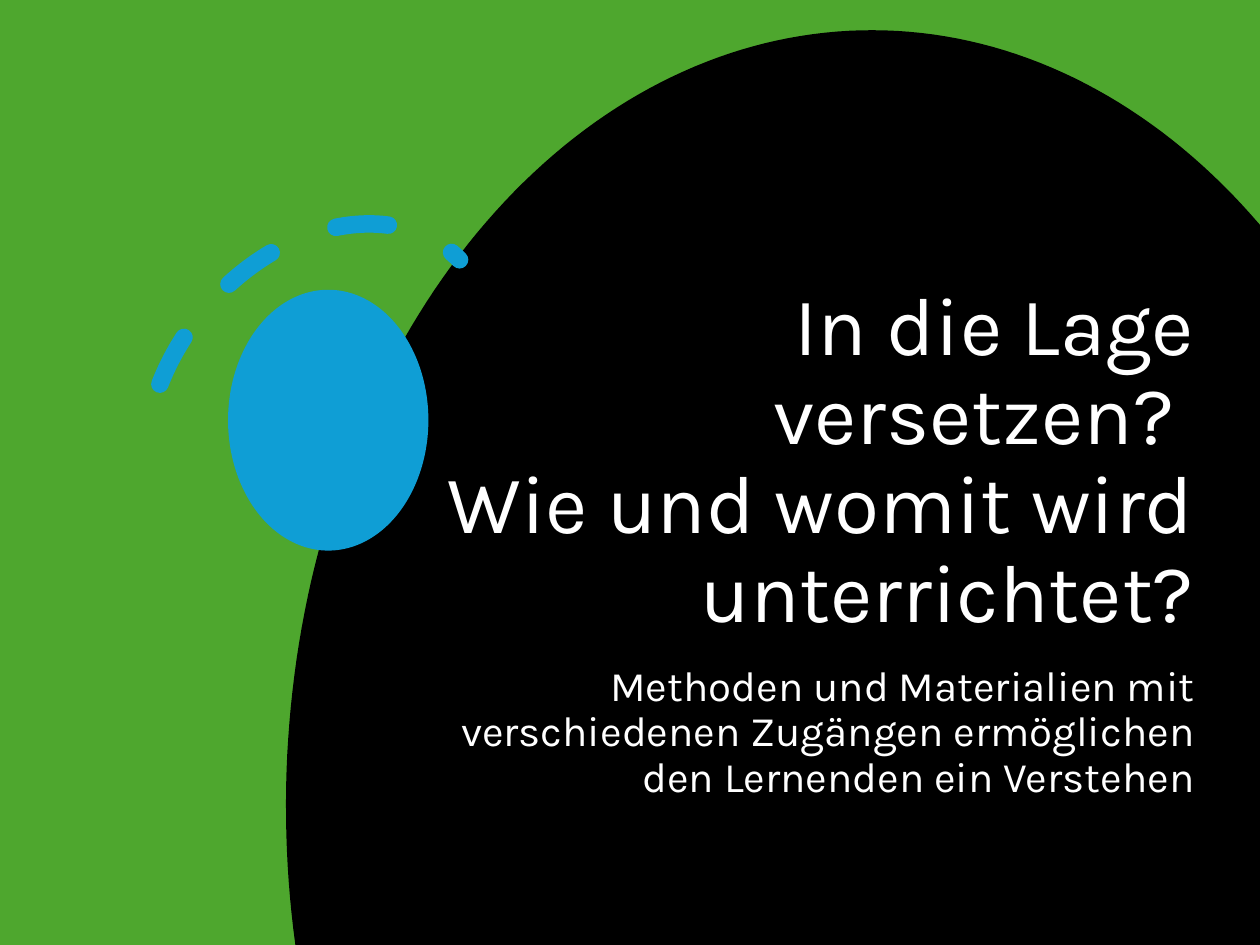
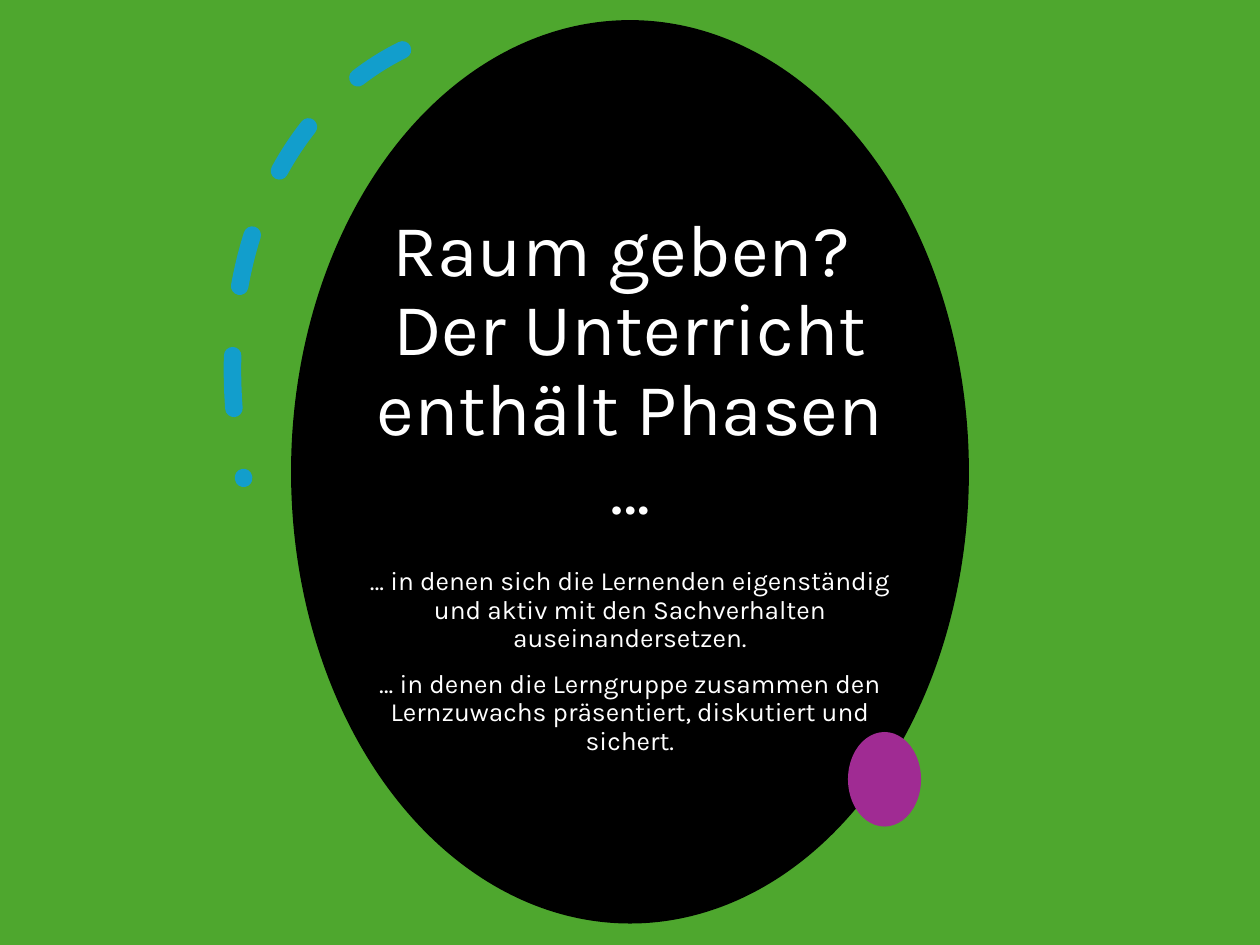
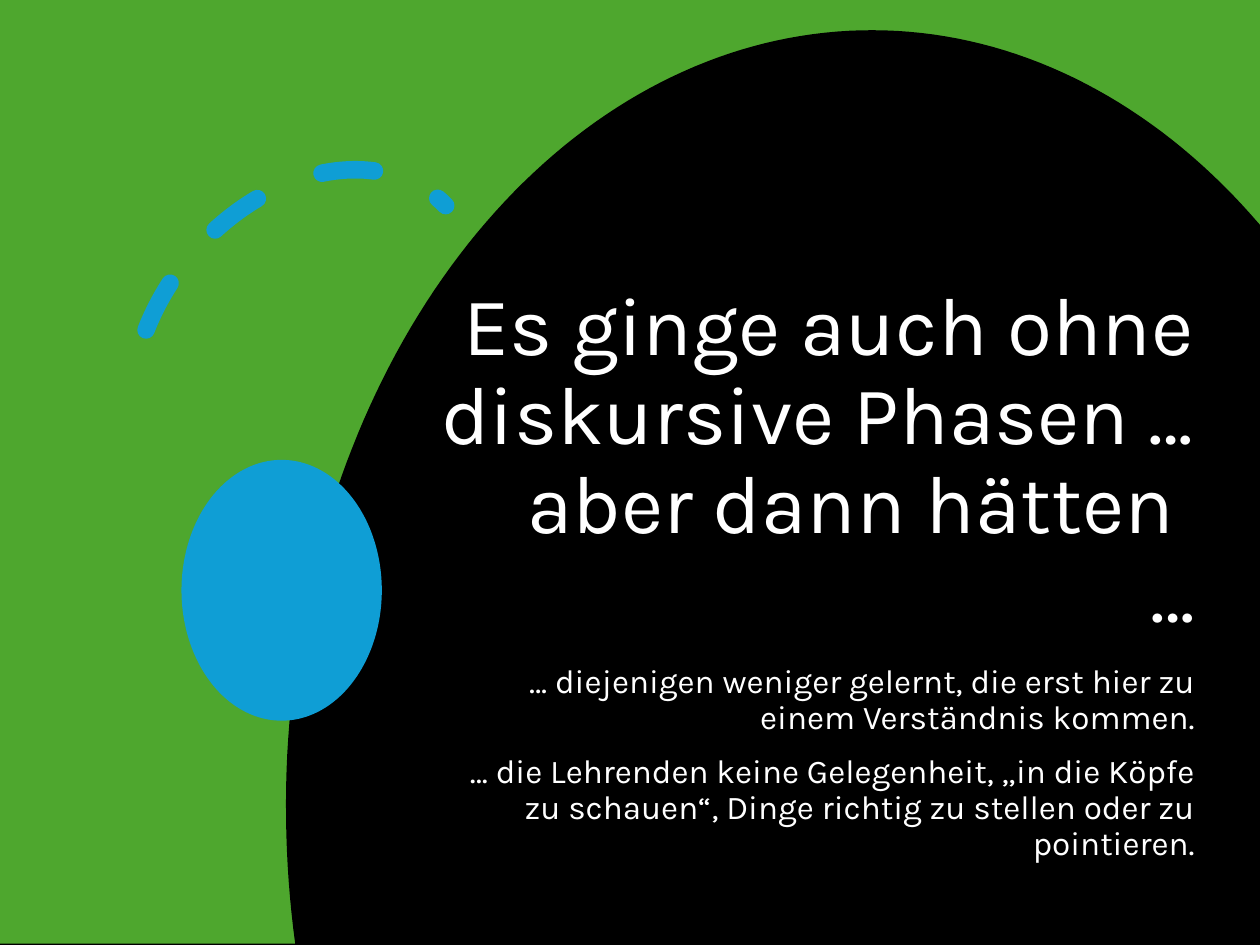
from math import asin, acos, cos, pi, sin

from lxml.etree import SubElement
from pptx import Presentation
from pptx.dml.color import RGBColor
from pptx.enum.dml import MSO_LINE_DASH_STYLE as Dash
from pptx.enum.shapes import MSO_SHAPE as Shape
from pptx.enum.text import MSO_ANCHOR as Anchor, PP_ALIGN as Align
from pptx.oxml.ns import qn
from pptx.util import Inches, Pt

THEME = {
    "night": RGBColor(0x00, 0x00, 0x00),
    "meadow": RGBColor(0x4E, 0xA7, 0x2E),
    "sky": RGBColor(0x0F, 0x9E, 0xD5),
    "plum": RGBColor(0xA0, 0x2B, 0x93),
    "ink": RGBColor(0xFF, 0xFF, 0xFF),
    "font": "Karla",
    "leading": 0.9,
    "gap": Pt(10),
    "dash_width": Pt(10),
}

COLUMNS, ROWS = 100, 75
CELL = Inches(10) // COLUMNS

HILL = {"center": (69.2, 64), "radii": (46.5, 61.6), "steps": 120}

LAYOUTS = {
    "hill": {
        "align": Align.RIGHT,
        "title": (33.1, 21.2, 62.7, 30.1),
        "body": (33.1, 52.3, 62.7, 14.5),
        "title_size": 47,
        "arc": {"size": (32.7, 24.5), "turn": 308.7, "span": (240.93, 3.8)},
    },
    "egg": {
        "align": Align.CENTER,
        "title": (27.2, 15.1, 45.6, 27.5),
        "body": (27.2, 44.6, 45.6, 16.8),
        "title_size": 42,
        "arc": {"size": (55.9, 74.5), "turn": 153.7, "span": (270, 334.89),
                "flip": True, "opacity": 95},
    },
}

SLIDES = [
    {
        "layout": "hill",
        "title": "In die Lage versetzen? \vWie und womit wird unterrichtet?",
        "body": ["Methoden und Materialien mit verschiedenen Zugängen "
                 "ermöglichen den Lernenden ein Verstehen"],
        "body_size": 24,
        "dots": [("sky", (18.1, 23, 15.9, 20.7))],
        "arc_at": (9.1, 20.4),
    },
    {
        "layout": "egg",
        "title": "Raum geben? \vDer Unterricht enthält Phasen …",
        "body": ["… in denen sich die Lernenden eigenständig und aktiv mit den "
                 "Sachverhalten auseinandersetzen.",
                 "… in denen die Lerngruppe zusammen den Lernzuwachs "
                 "präsentiert, diskutiert und sichert."],
        "body_size": 15,
        "dots": [("night", (23.1, 1.6, 53.8, 71.7)),
                 ("plum", (67.3, 58.1, 5.8, 7.5))],
        "arc_at": (20.5, 0.1),
    },
    {
        "layout": "hill",
        "title": "Es ginge auch ohne diskursive Phasen … aber dann hätten \v…",
        "body": ["… diejenigen weniger gelernt, die erst hier zu einem "
                 "Verständnis kommen.",
                 "… die Lehrenden keine Gelegenheit, „in die Köpfe zu schauen“, "
                 "Dinge richtig zu stellen oder zu pointieren."],
        "body_size": 19,
        "dots": [("sky", (14.4, 36.5, 15.9, 20.7))],
        "arc_at": (8, 16.1),
        "backdrop_top": -0.1,
    },
]


def cells(*lengths):
    return [round(length * CELL) for length in lengths]


def apply(target, **formats):
    for attribute, value in formats.items():
        setattr(target, attribute, value)


def paint(figure, color):
    figure.shadow.inherit = False
    figure.fill.solid()
    figure.fill.fore_color.rgb = THEME[color]
    figure.line.fill.background()


def add_filled(slide, preset, place, color):
    paint(slide.shapes.add_shape(preset, *cells(*place)), color)


def add_hill(slide):
    (center_x, center_y), (radius_x, radius_y) = HILL["center"], HILL["radii"]
    start = pi - asin((ROWS - center_y) / radius_y)
    end = 2 * pi - acos((COLUMNS - center_x) / radius_x)
    steps = HILL["steps"]
    angles = [start + (end - start) * step / steps for step in range(steps + 1)]
    rim = [cells(center_x + radius_x * cos(angle), center_y + radius_y * sin(angle))
           for angle in angles]
    outline = slide.shapes.build_freeform(*rim[0], scale=1.0)
    outline.add_line_segments(rim[1:] + [cells(COLUMNS, ROWS)], close=True)
    paint(outline.convert_to_shape(), "night")


def add_dashed_arc(slide, corner, size, turn, span, flip=False, opacity=100):
    arc = slide.shapes.add_shape(Shape.ARC, *cells(*corner, *size))
    arc.shadow.inherit = False
    arc.rotation = turn
    for index, degrees in enumerate(span):
        arc.adjustments[index] = degrees * 0.6
    arc.fill.background()
    arc.line.color.rgb = THEME["sky"]
    apply(arc.line, width=THEME["dash_width"], dash_style=Dash.DASH)
    stroke = arc.line._get_or_add_ln()
    stroke.set("cap", "rnd")
    if flip:
        arc._element.spPr.find(qn("a:xfrm")).set("flipV", "1")
    if opacity < 100:
        color = next(stroke.iter(qn("a:srgbClr")))
        SubElement(color, qn("a:alpha")).set("val", str(opacity * 1000))


def add_text(slide, place, lines, size, align, anchor):
    frame = slide.shapes.add_textbox(*cells(*place)).text_frame
    apply(frame, word_wrap=True, vertical_anchor=anchor)
    for index, line in enumerate(lines):
        paragraph = frame.paragraphs[0] if index == 0 else frame.add_paragraph()
        paragraph.text = line
        apply(paragraph, alignment=align, line_spacing=THEME["leading"])
        if index:
            paragraph.space_before = THEME["gap"]
        for run in paragraph.runs:
            apply(run.font, name=THEME["font"], size=Pt(size))
            run.font.color.rgb = THEME["ink"]


def build_slide(deck, content):
    slide = deck.slides.add_slide(deck.slide_layouts[6])
    layout = LAYOUTS[content["layout"]]
    slide.background.fill.solid()
    slide.background.fill.fore_color.rgb = THEME["night"]
    backdrop = (0, content.get("backdrop_top", 0), COLUMNS, ROWS)
    add_filled(slide, Shape.RECTANGLE, backdrop, "meadow")
    if content["layout"] == "hill":
        add_hill(slide)
    for color, place in content["dots"]:
        add_filled(slide, Shape.OVAL, place, color)
    add_dashed_arc(slide, content["arc_at"], **layout["arc"])
    add_text(slide, layout["title"], [content["title"]], layout["title_size"],
             layout["align"], Anchor.BOTTOM)
    add_text(slide, layout["body"], content["body"], content["body_size"],
             layout["align"], Anchor.TOP)


def main():
    deck = Presentation()
    apply(deck, slide_width=COLUMNS * CELL, slide_height=ROWS * CELL)
    for content in SLIDES:
        build_slide(deck, content)
    deck.save("out.pptx")


if __name__ == "__main__":
    main()
